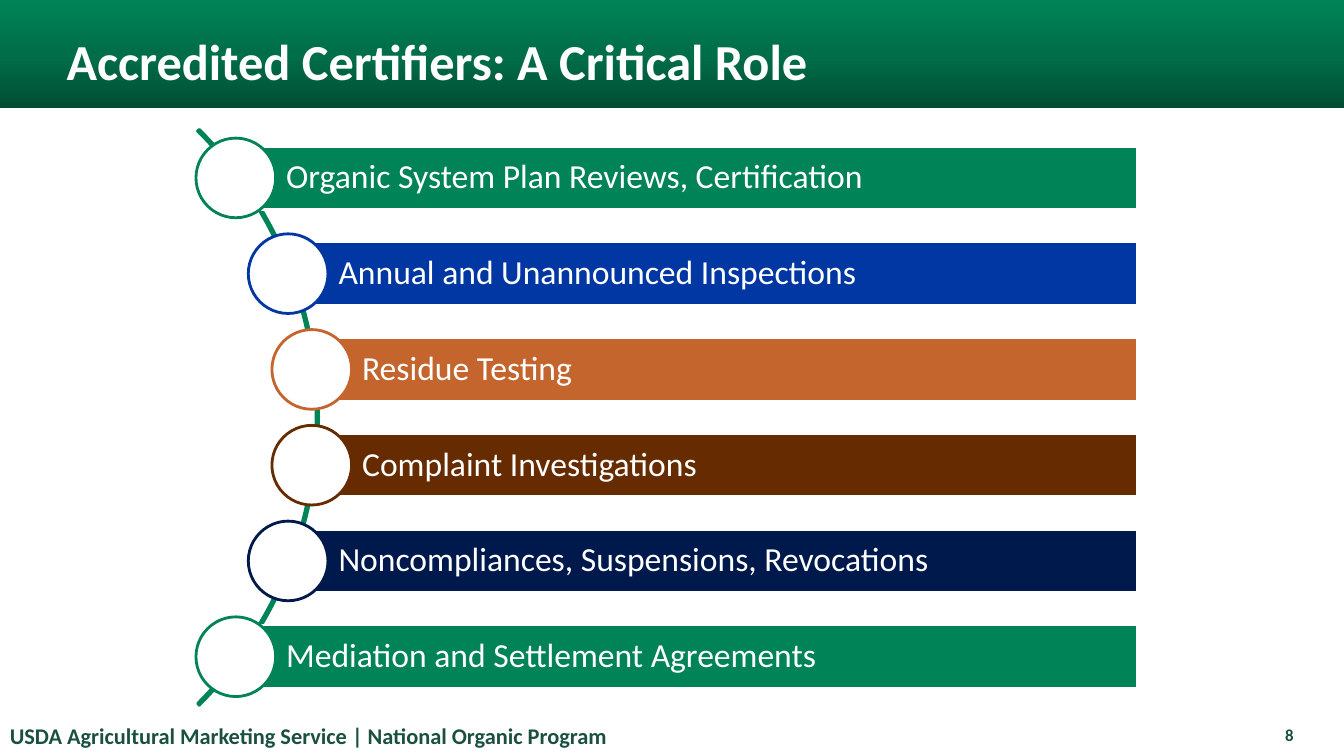
from copy import deepcopy
from math import sqrt

from pptx import Presentation
from pptx import util as u
from pptx.dml import color
from pptx.enum import shapes, text

theme = {
    "font": "Calibri",
    "white": "FFFFFF", "green": "008357", "mid": "006E49", "dark": "004E34",
    "blue": "0137A3", "rust": "C4652D", "brown": "672B00", "navy": "00194C",
    "foot": "1B5040",
    "title": 36, "label": 24, "note": 16, "page": 12,
}
kind = shapes.MSO_SHAPE
align = text.PP_ALIGN


def draw(form, box, fill=None, line=None):
    shape = deck.shapes.add_shape(form, *map(u.Inches, box))
    shape.shadow.inherit = False
    for part, hue in ((shape.fill, fill), (shape.line.fill, line)):
        if hue:
            part.solid()
            part.fore_color.rgb = color.RGBColor.from_string(theme[hue])
        else:
            part.background()
    if line:
        shape.line.width = u.Pt(2)
    return shape


def write(shape, words, size, hue, bold=False, side=align.LEFT):
    frame = shape.text_frame
    frame.word_wrap = True
    frame.auto_size = text.MSO_AUTO_SIZE.NONE
    frame.vertical_anchor = text.MSO_ANCHOR.MIDDLE
    para = frame.paragraphs[0]
    para.text = words
    para.alignment = side
    para.font.name = theme["font"]
    para.font.size = u.Pt(theme[size])
    para.font.bold = bold
    para.font.color.rgb = color.RGBColor.from_string(theme[hue])
    return frame


show = Presentation()
show.slide_width, show.slide_height = u.Inches(13.33), u.Inches(7.5)
deck = show.slides.add_slide(show.slide_layouts[5])

band = draw(kind.RECTANGLE, (0, 0, 13.33, 1.07))
band.fill.gradient()
band.fill.gradient_angle = 90
stops = band.fill.gradient_stops
first = stops[0]._element
first.addnext(deepcopy(first))
for stop, hue, place in zip(band.fill.gradient_stops, ("dark", "mid", "green"), (0, 0.5, 1)):
    stop.color.rgb = color.RGBColor.from_string(theme[hue])
    stop.position = place

title = deck.shapes.title
title.left, title.top, title.width, title.height = map(u.Inches, (0.56, 0.15, 11.7, 0.9))
write(title, "Accredited Certifiers: A Critical Role", "title", "white", True)
band._element.addnext(title._element)

hub, mid, reach = -0.88, 4.14, 4.04
arc = draw(kind.BLOCK_ARC, (hub - reach, mid - reach, 2 * reach, 2 * reach), line="green")
for index, value in enumerate((189, 27, 0.003)):
    arc.adjustments[index] = value

roles = [
    ("Organic System Plan Reviews, Certification", "green"),
    ("Annual and Unannounced Inspections", "blue"),
    ("Residue Testing", "rust"),
    ("Complaint Investigations", "brown"),
    ("Noncompliances, Suspensions, Revocations", "navy"),
    ("Mediation and Settlement Agreements", "green"),
]
step, orbit, edge, tall, disc = 0.95, 4, 11.28, 0.63, 0.79
for row, (words, hue) in enumerate(roles):
    drop = (row - (len(roles) - 1) / 2) * step
    left, level = hub + sqrt(orbit ** 2 - drop ** 2), mid + drop
    bar = draw(kind.RECTANGLE, (left, level - tall / 2, edge - left, tall), hue, "white")
    frame = write(bar, words, "label", "white")
    frame.margin_left = u.Inches(0.5)
    frame.margin_right = frame.margin_top = frame.margin_bottom = u.Inches(0.07)
    frame.paragraphs[0].line_spacing = 0.9
    draw(kind.OVAL, (left - disc / 2, level - disc / 2, disc, disc), "white", hue)

notes = [
    ((0, 7.1, 9, 0.4), "USDA Agricultural Marketing Service | National Organic Program", "note", align.LEFT),
    ((10.21, 7.09, 2.72, 0.4), "8", "page", align.RIGHT),
]
for box, words, size, side in notes:
    write(deck.shapes.add_textbox(*map(u.Inches, box)), words, size, "foot", True, side)

show.save("out.pptx")
